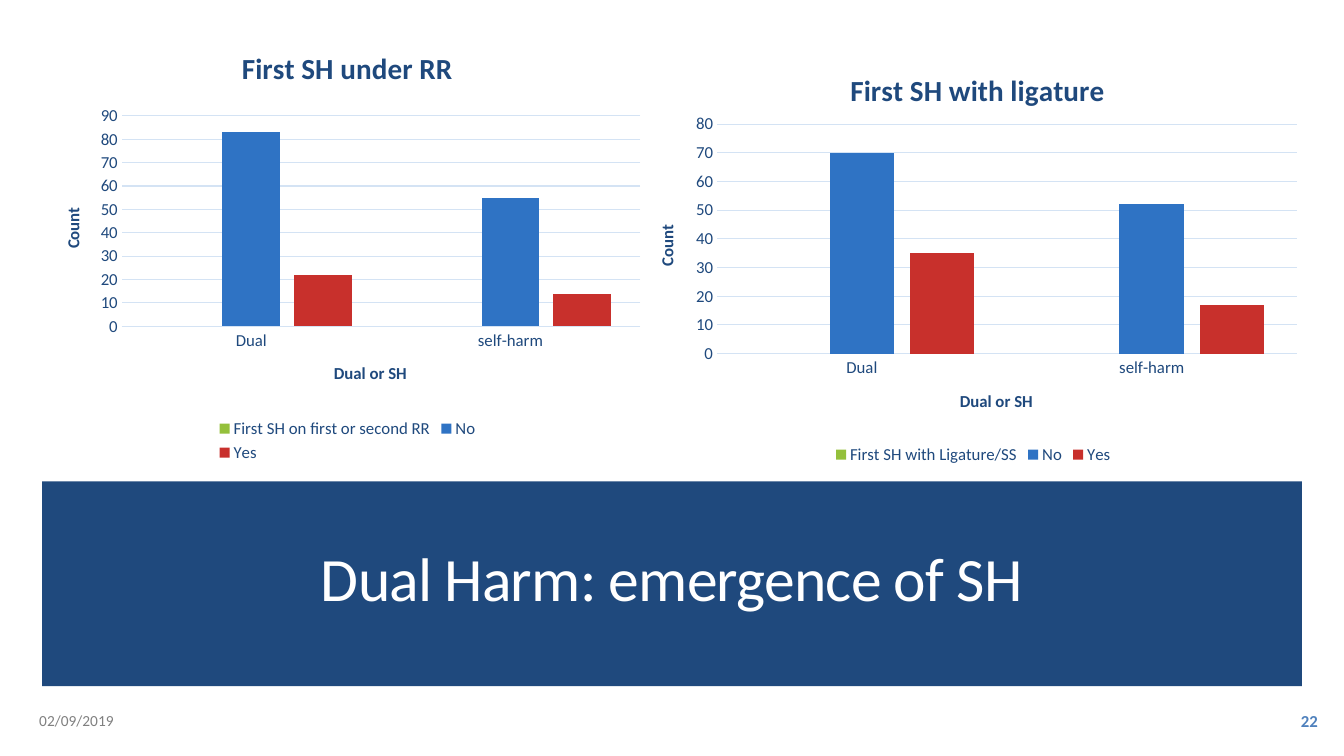
from lxml.etree import SubElement
from pptx import Presentation
from pptx.chart.data import CategoryChartData
from pptx.dml.color import RGBColor
from pptx.enum.chart import XL_CHART_TYPE, XL_LEGEND_POSITION, XL_TICK_MARK
from pptx.enum.shapes import MSO_SHAPE
from pptx.enum.text import MSO_ANCHOR, MSO_AUTO_SIZE, PP_ALIGN
from pptx.oxml.ns import qn
from pptx.util import Cm, Pt

# Content
FONT = "Calibri"
HUES = {"navy": "1F497D", "blue": "2F73C4", "red": "C8302C", "green": "94C03B",
        "grid": "D4E3F4", "white": "FFFFFF", "gray": "808080", "page": "4F81BD"}
TITLE = "Dual Harm: emergence of SH"
CATS = ["Dual", "self-harm"]
AXES = {"cat": "Dual or SH", "val": "Count"}
CHARTS = [
    {"title": "First SH under RR", "box": (1.07, 0.71, 15.37, 11.05), "top": 90,
     "plot": {"x": 0.13, "y": 0.2, "w": 0.85, "h": 0.48}, "head": None,
     "data": [("No", (83, 55), "blue"), ("Yes", (22, 14), "red"),
              ("First SH on first or second RR", (None, None), "green")]},
    {"title": "First SH with ligature", "box": (16.03, 1.09, 16.99, 10.72), "top": 80,
     "plot": {"x": 0.12, "y": 0.19, "w": 0.86, "h": 0.54},
     "head": {"x": 0.31, "y": 0.05},
     "data": [("No", (70, 52), "blue"), ("Yes", (35, 17), "red"),
              ("First SH with Ligature/SS", (None, None), "green")]},
]
NOTES = [
    ("02/09/2019", (0.74, 17.65, 4.22, 1.02), 11, "gray", False, PP_ALIGN.LEFT),
    ("22", (28.58, 17.65, 4.88, 1.02), 12, "page", True, PP_ALIGN.RIGHT),
]


def hue(name):
    return RGBColor.from_string(HUES[name])


def place(box):
    return [Cm(n) for n in box]


def style(font, size, color, bold=False):
    font.name, font.size, font.bold = FONT, Pt(size), bold
    font.color.rgb = hue(color)


def label(owner, text, size):
    """Write a bold title on a chart or an axis."""
    frame = (owner.chart_title if hasattr(owner, "chart_title")
             else owner.axis_title).text_frame
    frame.text = text
    style(frame.paragraphs[0].font, size, "navy", True)


def arrange(part, spots, inner=False):
    """Fix a chart part at fractions of the chart's size."""
    layout = part.find(qn("c:layout"))
    if layout is None:
        layout = SubElement(part, qn("c:layout"))
        text = part.find(qn("c:tx"))
        if text is None:
            part.insert(0, layout)
        else:
            text.addnext(layout)
    for child in list(layout):
        layout.remove(child)
    manual = SubElement(layout, qn("c:manualLayout"))
    if inner:
        SubElement(manual, qn("c:layoutTarget")).set("val", "inner")
    for side in "xy":
        SubElement(manual, qn(f"c:{side}Mode")).set("val", "edge")
    for side, part_of in spots.items():
        SubElement(manual, qn(f"c:{side}")).set("val", str(part_of))


def add_bars(slide, item):
    data = CategoryChartData()
    data.categories = CATS
    for name, vals, _ in item["data"]:
        data.add_series(name, vals)
    chart = slide.shapes.add_chart(
        XL_CHART_TYPE.COLUMN_CLUSTERED, *place(item["box"]), data).chart
    style(chart.font, 12, "navy")
    label(chart, item["title"], 20.8)
    chart.chart_title.include_in_layout = False

    # Bars, with the empty series drawn first
    plot = chart.plots[0]
    plot.gap_width, plot.overlap, plot.vary_by_categories = 100, -24, False
    bars = list(plot.series)
    for bar, (_, _, color) in zip(bars, item["data"]):
        bar.format.fill.solid()
        bar.format.fill.fore_color.rgb = hue(color)
        bar.invert_if_negative = False
    bars[0]._element.addprevious(bars[-1]._element)

    # Axes
    cat, val = chart.category_axis, chart.value_axis
    for axis, text in ((cat, AXES["cat"]), (val, AXES["val"])):
        label(axis, text, 12)
        axis.major_tick_mark = axis.minor_tick_mark = XL_TICK_MARK.NONE
        style(axis.tick_labels.font, 12, "navy")
    val.minimum_scale, val.maximum_scale, val.major_unit = 0, item["top"], 10
    val.format.line.fill.background()
    for line in (cat.format.line, val.major_gridlines.format.line):
        line.color.rgb = hue("grid")
        line.width = Pt(0.75)

    # Legend
    chart.has_legend = True
    chart.legend.position = XL_LEGEND_POSITION.BOTTOM
    chart.legend.include_in_layout = False
    style(chart.legend.font, 12, "navy")

    # Places inside the chart
    arrange(plot._element.getparent(), item["plot"], inner=True)
    if item["head"]:
        arrange(chart.chart_title._element, item["head"])


def add_note(slide, text, box, size, color, bold, side):
    frame = slide.shapes.add_textbox(*place(box)).text_frame
    frame.word_wrap = True
    frame.vertical_anchor = MSO_ANCHOR.MIDDLE
    para = frame.paragraphs[0]
    para.text, para.alignment, para.space_after = text, side, Pt(6)
    style(para.font, size, color, bold)


def add_title(slide):
    # Band behind the title
    band = slide.shapes.add_shape(
        MSO_SHAPE.RECTANGLE, *place((1.06, 12.13, 31.75, 5.16)))
    band.shadow.inherit = False
    band.fill.solid()
    band.fill.fore_color.rgb = hue("navy")
    band.line.fill.background()

    # Title in front of the band
    head = slide.shapes.title
    band._element.addnext(head._element)
    head.left, head.top, head.width, head.height = place((1.54, 12.77, 30.78, 3.78))
    frame = head.text_frame
    frame.text = TITLE
    frame.word_wrap, frame.auto_size = True, MSO_AUTO_SIZE.NONE
    frame.vertical_anchor = MSO_ANCHOR.MIDDLE
    para = frame.paragraphs[0]
    para.alignment, para.line_spacing = PP_ALIGN.CENTER, 0.9
    style(para.font, 44, "white")
    para.runs[0].font._element.set("spc", "-60")


def main():
    deck = Presentation()
    deck.slide_width, deck.slide_height = Cm(33.87), Cm(19.05)
    slide = deck.slides.add_slide(deck.slide_layouts[5])
    add_title(slide)
    for item in CHARTS:
        add_bars(slide, item)
    for note in NOTES:
        add_note(slide, *note)
    deck.save("out.pptx")


if __name__ == "__main__":
    main()
